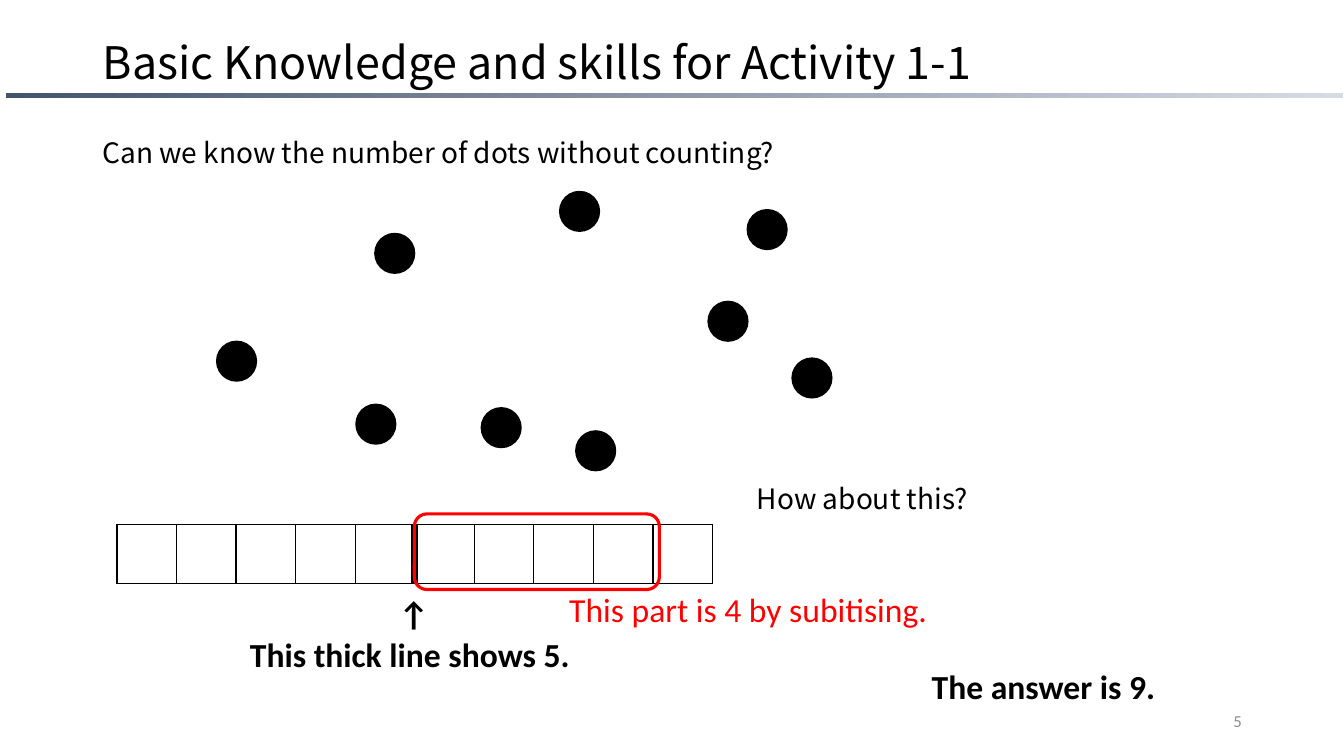
from dataclasses import dataclass

from lxml import etree
from pptx import Presentation
from pptx.dml.color import RGBColor
from pptx.enum.shapes import MSO_SHAPE
from pptx.enum.text import MSO_ANCHOR, PP_ALIGN
from pptx.oxml.ns import qn
from pptx.util import Pt

RECT, OVAL, ROUNDED = MSO_SHAPE.RECTANGLE, MSO_SHAPE.OVAL, MSO_SHAPE.ROUNDED_RECTANGLE
TOP, MIDDLE = MSO_ANCHOR.TOP, MSO_ANCHOR.MIDDLE
LEFT, CENTER, RIGHT = PP_ALIGN.LEFT, PP_ALIGN.CENTER, PP_ALIGN.RIGHT


@dataclass(frozen=True)
class Theme:
    """Colours, fonts and type sizes of the slide."""
    ink: str = "000000"
    accent: str = "FF0000"
    muted: str = "8C8C8C"
    bar_dark: str = "44546A"
    bar_light: str = "D6DCE5"
    heading_font: str = "Noto Sans CJK JP"
    note_font: str = "Calibri"
    title_size: int = 32
    question_size: int = 20
    note_size: int = 24
    number_size: int = 12


THEME = Theme()


def rgb(value):
    """Turn a hex string into a colour."""
    return RGBColor.from_string(value)


def add_text(slide, box, lines, size, font=THEME.note_font, color=THEME.ink,
             bold=False, align=LEFT, anchor=TOP, spacing=None, before=None):
    """Write lines as paragraphs in a wrapping text box."""
    frame = slide.shapes.add_textbox(*map(Pt, box)).text_frame
    frame.word_wrap = True
    frame.vertical_anchor = anchor
    for index, line in enumerate(lines):
        paragraph = frame.add_paragraph() if index else frame.paragraphs[0]
        paragraph.alignment = align
        paragraph.line_spacing = spacing
        if before:
            paragraph.space_before = Pt(before)
        run = paragraph.add_run()
        run.text = line
        run.font.name, run.font.size, run.font.bold = font, Pt(size), bold
        run.font.color.rgb = rgb(color)


def add_plain_shape(slide, kind, box):
    """Add a preset shape without shadow."""
    shape = slide.shapes.add_shape(kind, *map(Pt, box))
    shape.shadow.inherit = False
    return shape


def add_header(slide, box):
    """Place the title above its gradient bar."""
    left, top, width, height = box
    add_text(slide, (left + 62, top, 828, 35.3),
             ["Basic Knowledge and skills for Activity 1-1"],
             THEME.title_size, THEME.heading_font, anchor=MIDDLE, spacing=0.9)
    bar = add_plain_shape(slide, RECT, (left, top + height - 3, width, 3))
    bar.line.fill.background()
    bar.fill.gradient()
    bar.fill.gradient_angle = 0
    for stop, color in zip(bar.fill.gradient_stops, (THEME.bar_dark, THEME.bar_light)):
        stop.color.rgb = rgb(color)
    for stop, position in zip(bar.fill.gradient_stops, (0, 1)):
        stop.position = position


def add_question(slide, box, question):
    """Write a question in the heading font."""
    add_text(slide, box, [question], THEME.question_size, THEME.heading_font,
             spacing=1.5, before=10)


def add_dots(slide, box):
    """Scatter nine equal dots in the box."""
    left, top = box[:2]
    diameter = 28.4
    centers = [(393, 27), (14, 121), (259, 14), (365, 92.5), (127, 44),
               (270.5, 185), (113.5, 166), (203, 168.5), (425, 133)]
    for x, y in centers:
        dot = add_plain_shape(slide, OVAL, (left + x - diameter / 2, top + y - diameter / 2,
                                            diameter, diameter))
        dot.fill.solid()
        dot.fill.fore_color.rgb = rgb(THEME.ink)
        dot.line.color.rgb = rgb(THEME.ink)
        dot.line.width = Pt(1)


def set_border(cell, side, width):
    """Draw one side of a table cell."""
    line = etree.SubElement(cell._tc.get_or_add_tcPr(), qn(f"a:ln{side}"), w=str(Pt(width)))
    fill = etree.SubElement(line, qn("a:solidFill"))
    etree.SubElement(fill, qn("a:srgbClr"), val=THEME.ink)


def add_ten_strip(slide, box, count=10, thick_after=5):
    """Draw a strip of squares with a thick line after the fifth."""
    strip = slide.shapes.add_table(1, count, *map(Pt, box)).table
    strip.first_row = strip.horz_banding = False
    for index in range(count):
        strip.columns[index].width = Pt(box[2] / count)
        square = strip.cell(0, index)
        thick_side = {thick_after - 1: "R", thick_after: "L"}.get(index)
        for side in "LRTB":
            set_border(square, side, 6 if side == thick_side else 1)
        square.fill.background()


def add_strip_region(slide, box):
    """Place the strip of squares with its two explanations."""
    left, top, width, height = box
    add_text(slide, (left + 5, top + 45.4, 414, 65.5), ["↑", "This thick line shows 5. "],
             THEME.note_size, bold=True, align=CENTER, anchor=MIDDLE)
    add_ten_strip(slide, box)
    four = add_plain_shape(slide, ROUNDED, (left + 212.5, top - 7.3, 175, 54))
    four.fill.background()
    four.line.color.rgb = rgb(THEME.accent)
    four.line.width = Pt(2.25)
    add_text(slide, (left + 316, top + 42.5, 296.6, 36), ["This part is 4 by subitising."],
             THEME.note_size, color=THEME.accent)


def add_footer(slide, box):
    """Place the answer and the slide number."""
    left, top = box[:2]
    add_text(slide, (left, top, 220.3, 36), ["The answer is 9. "], THEME.note_size,
             bold=True, align=CENTER, anchor=MIDDLE)
    add_text(slide, (left + 40.3, top + 28.2, 216, 28.8), ["5"], THEME.number_size,
             color=THEME.muted, align=RIGHT, anchor=MIDDLE)


def main():
    """Build and save the slide."""
    deck = Presentation()
    deck.slide_width, deck.slide_height = Pt(960), Pt(540)
    slide = deck.slides.add_slide(deck.slide_layouts[6])
    add_header(slide, (4.3, 28.8, 954.7, 41))
    add_question(slide, (66.2, 81.4, 571.7, 38.9),
                 "Can we know the number of dots without counting?")
    add_dots(slide, (155, 137, 440, 200))
    add_question(slide, (533.5, 328.3, 221.8, 38.9), "How about this?")
    add_strip_region(slide, (83.5, 374.4, 425.5, 42.5))
    add_footer(slide, (637.9, 472.3, 256.3, 57))
    deck.save("out.pptx")


if __name__ == "__main__":
    main()
